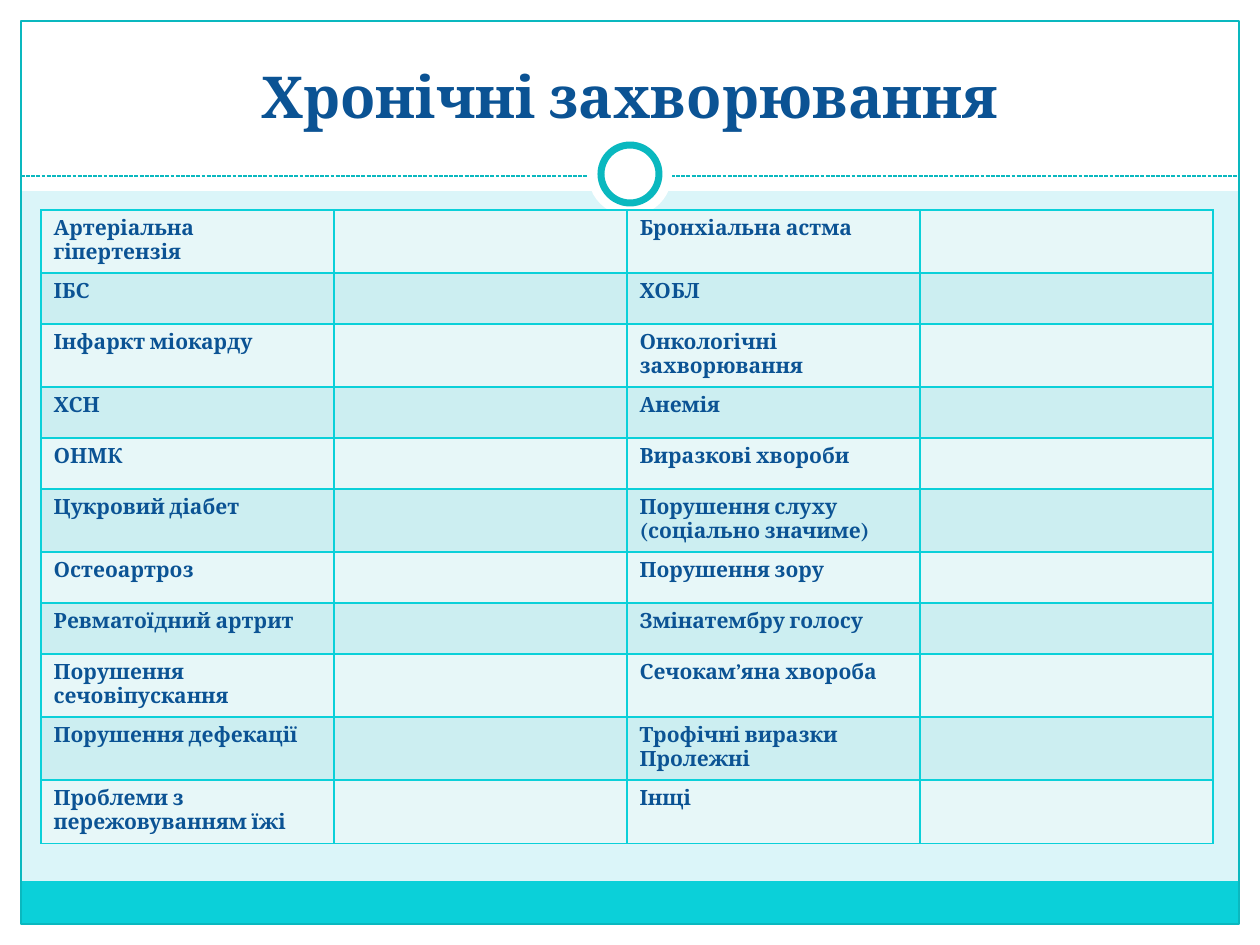
from dataclasses import dataclass

from lxml import etree
from pptx import Presentation
from pptx.dml.color import RGBColor
from pptx.enum.dml import MSO_LINE
from pptx.enum.shapes import MSO_CONNECTOR, MSO_SHAPE
from pptx.enum.text import MSO_ANCHOR, PP_ALIGN
from pptx.oxml import parse_xml
from pptx.oxml.ns import nsdecls, qn
from pptx.util import Pt

SCALE = 914400 / 126  # EMU per px


@dataclass(frozen=True)
class Theme:
    font: str = "Cambria"
    title_size: int = 33
    cell_size: int = 12
    text: str = "0B5394"
    back: str = "DBF5F9"
    white: str = "FFFFFF"
    accent: str = "0BD0D9"
    rule: str = "0AB8BF"
    bands: tuple = ("E7F7F8", "CCEEF1")


THEME = Theme()

DISEASES = [
    ("Артеріальна гіпертензія", "Бронхіальна астма"),
    ("ІБС", "ХОБЛ"),
    ("Інфаркт міокарду", "Онкологічні захворювання"),
    ("ХСН", "Анемія"),
    ("ОНМК", "Виразкові хвороби"),
    ("Цукровий діабет", "Порушення слуху\n(соціально значиме)"),
    ("Остеоартроз", "Порушення зору"),
    ("Ревматоїдний артрит", "Змінатембру голосу"),
    ("Порушення сечовіпускання", "Сечокам’яна хвороба"),
    ("Порушення дефекації", "Трофічні виразки\nПролежні"),
    ("Проблеми з пережовуванням їжі", "Інщі"),
]


def px(*values):
    return [round(v * SCALE) for v in values]


def rgb(color):
    return RGBColor.from_string(color)


def add_shape(slide, kind, box, fill=None, line=None, width=0.75):
    s = slide.shapes.add_shape(kind, *px(*box))
    s.shadow.inherit = False
    if fill:
        s.fill.solid()
        s.fill.fore_color.rgb = rgb(fill)
    else:
        s.fill.background()
    if line:
        s.line.color.rgb = rgb(line)
        s.line.width = Pt(width)
    else:
        s.line.fill.background()
    return s


def style_text(p, text, size):
    p.text = text
    p.font.name = THEME.font
    p.font.size = Pt(size)
    p.font.bold = True
    p.font.color.rgb = rgb(THEME.text)


def add_frame(slide, box):
    x, y, w, h = box
    margin, header, footer = 21, 191, 43
    rect = MSO_SHAPE.RECTANGLE

    # White header and margins
    for part in (
        (x, y + h - margin, w, margin),
        (x, y, w, header),
        (x, y, margin, h),
        (x + w - margin, y, margin, h),
    ):
        add_shape(slide, rect, part, THEME.white)

    # Footer band and outline
    left, right = x + margin, x + w - margin
    inner_w, bottom = right - left, y + h - margin
    add_shape(slide, rect, (left, bottom - footer, inner_w, footer), THEME.accent)
    add_shape(slide, rect, (left, y + margin, inner_w, h - 2 * margin), line=THEME.rule)

    # Dashed rule
    rule_y = y + 176
    line = slide.shapes.add_connector(
        MSO_CONNECTOR.STRAIGHT, *px(left, rule_y, right, rule_y))
    line.line.color.rgb = rgb(THEME.rule)
    line.line.width = Pt(0.75)
    line.line.dash_style = MSO_LINE.SQUARE_DOT
    sp_pr = line._element.spPr
    sp_pr.find(qn("a:ln")).find(qn("a:prstDash")).set("val", "sysDash")
    etree.SubElement(sp_pr, qn("a:effectLst"))

    # Ring on the rule
    cx, cy = x + w // 2, y + 174
    for size, border in ((84, None), (58, THEME.rule)):
        ring = (cx - size // 2, cy - size // 2, size, size)
        add_shape(slide, MSO_SHAPE.OVAL, ring, THEME.white, border, 4)


def add_title(slide, box, text):
    tf = slide.shapes.add_textbox(*px(*box)).text_frame
    tf.word_wrap = True
    tf.vertical_anchor = MSO_ANCHOR.BOTTOM
    p = tf.paragraphs[0]
    p.alignment = PP_ALIGN.CENTER
    style_text(p, text, THEME.title_size)


def set_borders(cell, color, width):
    tc_pr = cell._tc.get_or_add_tcPr()
    for i, side in enumerate("LRTB"):
        tc_pr.insert(i, parse_xml(
            f'<a:ln{side} {nsdecls("a")} w="{Pt(width)}"><a:solidFill>'
            f'<a:srgbClr val="{color}"/></a:solidFill></a:ln{side}>'))


def add_disease_table(slide, box, diseases):
    table = slide.shapes.add_table(len(diseases), 4, *px(*box)).table
    table.first_row = False
    table.horz_banding = False
    for r, names in enumerate(diseases):
        for c in range(4):
            cell = table.cell(r, c)
            cell.fill.solid()
            cell.fill.fore_color.rgb = rgb(THEME.bands[r % 2])
            set_borders(cell, THEME.accent, 1)
            # Every second column stays empty for marks
            if c % 2 == 0:
                p = cell.text_frame.paragraphs[0]
                style_text(p, names[c // 2], THEME.cell_size)


def main():
    prs = Presentation()
    prs.slide_width, prs.slide_height = px(1260, 945)
    slide = prs.slides.add_slide(prs.slide_layouts[6])
    slide.background.fill.solid()
    slide.background.fill.fore_color.rgb = rgb(THEME.back)

    add_frame(slide, (0, 0, 1260, 945))
    add_title(slide, (42, 32, 1176, 104), "Хронічні захворювання")
    add_disease_table(slide, (41, 210, 1172, 51 * len(DISEASES)), DISEASES)
    prs.save("out.pptx")


if __name__ == "__main__":
    main()
